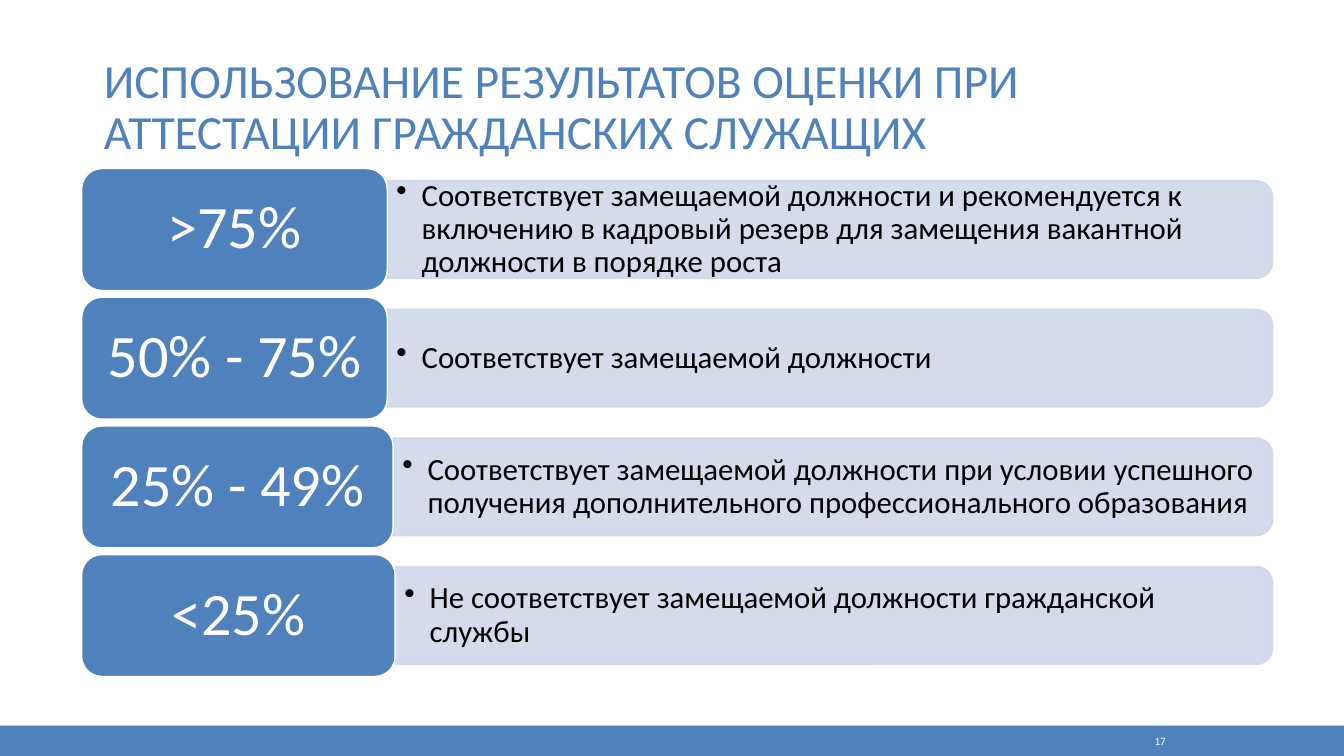
from dataclasses import dataclass

from lxml import etree
from pptx import Presentation
from pptx.dml.color import RGBColor
from pptx.enum import shapes, text
from pptx.oxml import ns
from pptx.util import Pt


@dataclass(frozen=True)
class Theme:
    font: str = "Calibri"
    accent: RGBColor = RGBColor(0x4F, 0x81, 0xBD)
    bar: RGBColor = RGBColor(0xD0, 0xD8, 0xE8)
    white: RGBColor = RGBColor(0xFF, 0xFF, 0xFF)
    black: RGBColor = RGBColor(0, 0, 0)
    title_size: int = 34
    score_size: int = 43
    body_size: int = 22
    number_size: int = 8


T = Theme()

# Layout, in points
SLIDE_W, SLIDE_H = 960, 540
ROW_LEFT, ROW_RIGHT, ROW_TOP, ROW_PITCH = 58.3, 909, 120.4, 91.9
SCORE_H, BAR_H, BAR_TEXT_H = 87.1, 69.8, 63.4

TITLE = "ИСПОЛЬЗОВАНИЕ РЕЗУЛЬТАТОВ ОЦЕНКИ ПРИ АТТЕСТАЦИИ ГРАЖДАНСКИХ СЛУЖАЩИХ"
# Score, width of its box, conclusion
ROWS = [
    (">75%", 218.3, "Соответствует замещаемой должности и рекомендуется к включению "
                    "в кадровый резерв для замещения вакантной должности в порядке роста"),
    ("50% - 75%", 218.3, "Соответствует замещаемой должности"),
    ("25% - 49%", 222.5, "Соответствует замещаемой должности при условии успешного "
                         "получения дополнительного профессионального образования"),
    ("<25%", 224, "Не соответствует замещаемой должности гражданской службы"),
]


def write(sp, words, size, color, align, anchor, insets=(7.2, 3.6), spacing=0.9):
    """Set one formatted paragraph in a shape and return it."""
    tf = sp.text_frame
    tf.word_wrap = True
    tf.auto_size = text.MSO_AUTO_SIZE.NONE
    tf.vertical_anchor = anchor
    tf.margin_left = tf.margin_right = Pt(insets[0])
    tf.margin_top = tf.margin_bottom = Pt(insets[1])
    p = tf.paragraphs[0]
    p.text = words
    p.alignment = align
    p.line_spacing = spacing
    p.font.name, p.font.size, p.font.color.rgb = T.font, Pt(size), color
    return p


def add_block(s, kind, left, top, width, height, fill, line=None):
    sp = s.shapes.add_shape(kind, Pt(left), Pt(top), Pt(width), Pt(height))
    sp.shadow.inherit = False
    sp.fill.solid()
    sp.fill.fore_color.rgb = fill
    if line is None:
        sp.line.fill.background()
    else:
        sp.line.color.rgb = line
        sp.line.width = Pt(1)
    return sp


def add_bullet(p, indent):
    pPr = p._p.get_or_add_pPr()
    pPr.set("marL", str(Pt(indent)))
    pPr.set("indent", str(-Pt(indent)))
    bullet = etree.Element(ns.qn("a:buChar"), char="•")
    pPr.find(ns.qn("a:defRPr")).addprevious(bullet)


def add_bar(s, left, middle, words):
    # The bar is an upright shape turned so that its rounded end faces right
    length = ROW_RIGHT - left
    sp = add_block(s, shapes.MSO_SHAPE.ROUND_2_SAME_RECTANGLE,
                   left + (length - BAR_H) / 2, middle - length / 2,
                   BAR_H, length, T.bar, T.bar)
    sp.rotation = 90
    for color in sp._element.spPr.iter(ns.qn("a:srgbClr")):
        etree.SubElement(color, ns.qn("a:alpha"), val="90000")

    box = s.shapes.add_textbox(Pt(left), Pt(middle - BAR_TEXT_H / 2),
                               Pt(length - 3.4), Pt(BAR_TEXT_H))
    p = write(box, words, T.body_size, T.black, text.PP_ALIGN.LEFT,
              text.MSO_ANCHOR.MIDDLE, (6.6, 3.6))
    add_bullet(p, 18)


def add_score(s, top, width, words):
    sp = add_block(s, shapes.MSO_SHAPE.ROUNDED_RECTANGLE, ROW_LEFT, top,
                   width, SCORE_H, T.accent, T.white)
    write(sp, words, T.score_size, T.white, text.PP_ALIGN.CENTER,
          text.MSO_ANCHOR.MIDDLE)


def add_title(s):
    sp = s.shapes.title
    sp.left, sp.top, sp.width, sp.height = Pt(67), Pt(28), Pt(840), Pt(90)
    write(sp, TITLE, T.title_size, T.accent, text.PP_ALIGN.LEFT,
          text.MSO_ANCHOR.BOTTOM)


def add_footer(s):
    add_block(s, shapes.MSO_SHAPE.RECTANGLE, 0, 518.4, SLIDE_W, 21.6, T.accent)
    box = s.shapes.add_textbox(Pt(779), Pt(520), Pt(61), Pt(18))
    write(box, "17", T.number_size, T.white, text.PP_ALIGN.RIGHT,
          text.MSO_ANCHOR.MIDDLE, spacing=1.0)


def main():
    prs = Presentation()
    prs.slide_width, prs.slide_height = Pt(SLIDE_W), Pt(SLIDE_H)
    s = prs.slides.add_slide(prs.slide_layouts[5])

    add_footer(s)
    add_title(s)

    # Score boxes with their conclusions
    for i, (score, width, conclusion) in enumerate(ROWS):
        top = ROW_TOP + i * ROW_PITCH
        add_bar(s, ROW_LEFT + width, top + SCORE_H / 2, conclusion)
        add_score(s, top, width, score)

    prs.save("out.pptx")


if __name__ == "__main__":
    main()
